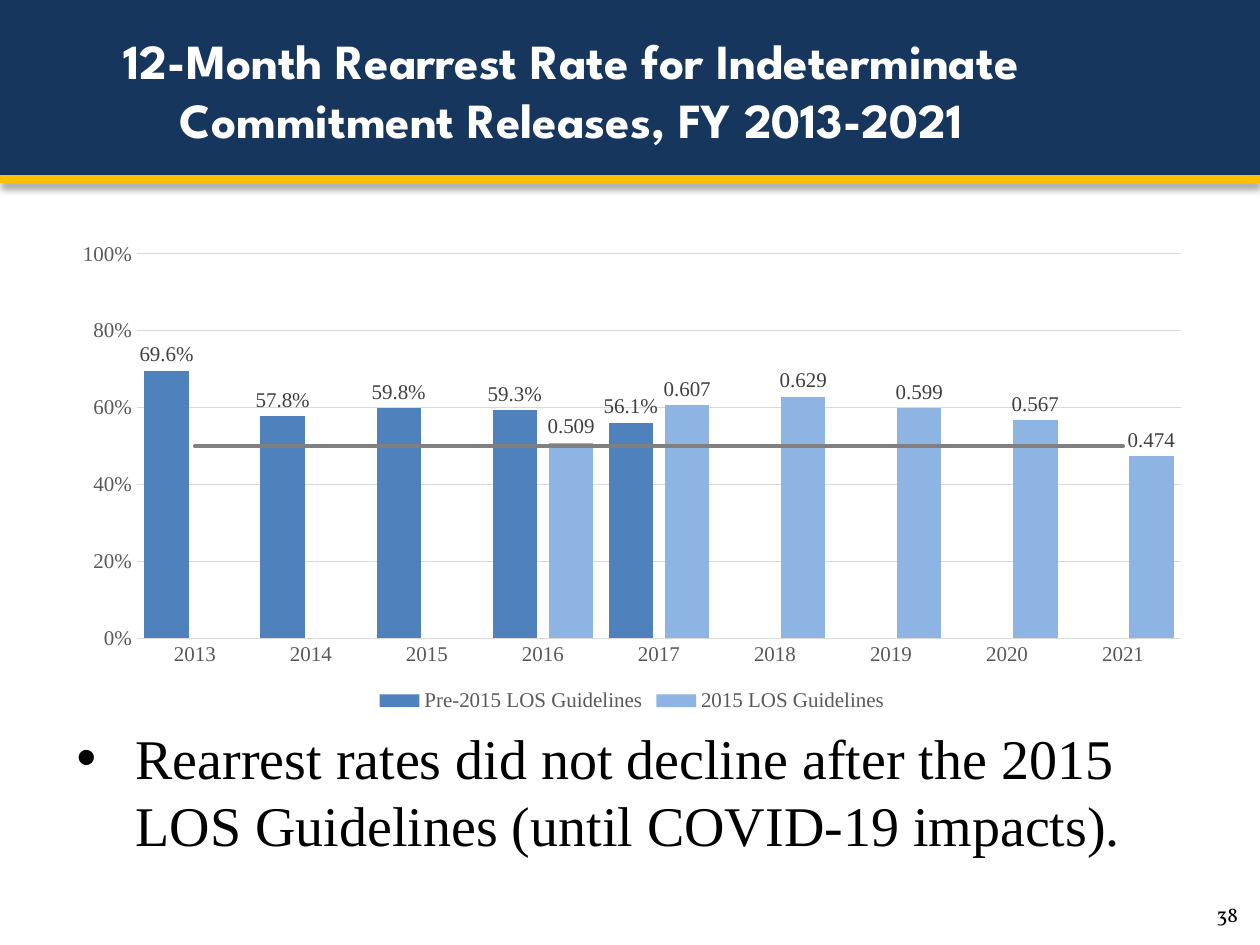
from lxml import etree
from pptx import Presentation
from pptx.chart.data import CategoryChartData
from pptx.dml.color import RGBColor
from pptx.enum import chart as charts, shapes, text
from pptx.oxml import parse_xml
from pptx.oxml.ns import nsdecls, qn
from pptx.util import Emu, Pt

PX = 914400 / 126
COLORS = {"navy": "17365D", "gold": "FFC000", "white": "FFFFFF", "black": "000000",
          "before": "4F81BD", "after": "8EB4E3", "target": "808080",
          "grid": "D9D9D9", "axis": "595959", "label": "404040"}
SERIF = "Times New Roman"


def px(*lengths):
    return [Emu(round(length * PX)) for length in lengths]


def style(font, name, size, color, bold=False):
    font.name, font.size, font.bold = name, Pt(size), bold
    font.color.rgb = RGBColor.from_string(COLORS[color])


deck = Presentation()
deck.slide_width, deck.slide_height = px(1260, 945)
page = deck.slides.add_slide(deck.slide_layouts[1])
title, body = page.placeholders[0], page.placeholders[1]

# Header band and gold rule, placed behind the title
band = page.shapes.add_shape(shapes.MSO_SHAPE.RECTANGLE, *px(0, 0, 1260, 179))
band.shadow.inherit = False
band.fill.solid()
band.fill.fore_color.rgb = RGBColor.from_string(COLORS["navy"])
band.line.fill.background()
rule = page.shapes.add_connector(shapes.MSO_CONNECTOR.STRAIGHT, *px(0, 179, 1260, 179))
rule.line.width = Pt(4.5)
rule.line.color.rgb = RGBColor.from_string(COLORS["gold"])
rule._element.spPr.append(parse_xml(
    f'<a:effectLst {nsdecls("a")}><a:outerShdw blurRad="50800" dist="38100" dir="5400000" '
    'rotWithShape="0"><a:srgbClr val="000000"><a:alpha val="40000"/></a:srgbClr>'
    '</a:outerShdw></a:effectLst>'))
for depth, part in enumerate((band, rule)):
    page.shapes._spTree.insert(2 + depth, part._element)

# Title
title.left, title.top, title.width, title.height = px(60, 10, 1022, 158)
title.text_frame.auto_size = text.MSO_AUTO_SIZE.NONE
title.text_frame.vertical_anchor = text.MSO_ANCHOR.MIDDLE
para = title.text_frame.paragraphs[0]
para.alignment = text.PP_ALIGN.CENTER
span = para.add_run()
span.text = "12-Month Rearrest Rate for Indeterminate Commitment Releases, FY 2013-2021"
style(span.font, "League Spartan", 28, "white", bold=True)

# Takeaway bullet
body.left, body.top, body.width, body.height = px(60, 717, 1142, 186)
body.text_frame.auto_size = text.MSO_AUTO_SIZE.NONE
para = body.text_frame.paragraphs[0]
props = para._p.get_or_add_pPr()
props.set("marL", str(int(px(63)[0])))
props.set("indent", str(int(px(-59)[0])))
bullet_color = etree.SubElement(props, qn("a:buClr"))
etree.SubElement(bullet_color, qn("a:srgbClr")).set("val", COLORS["black"])
etree.SubElement(props, qn("a:buFont")).set("typeface", "Arial")
etree.SubElement(props, qn("a:buChar")).set("char", "•")
para.space_before = Pt(0)
span = para.add_run()
span.text = "Rearrest rates did not decline after the 2015 LOS Guidelines (until COVID-19 impacts)."
style(span.font, SERIF, 32, "black")

# Chart data
data = CategoryChartData()
data.categories = [str(year) for year in range(2013, 2022)]
data.add_series("Pre-2015 LOS Guidelines",
                [0.696, 0.578, 0.598, 0.593, 0.561] + [None] * 4, "0.0%")
data.add_series("2015 LOS Guidelines",
                [None] * 3 + [0.509, 0.607, 0.629, 0.599, 0.567, 0.474], "General")
data.add_series("Series 3", [0.5] * 9, "General")
chart = page.shapes.add_chart(charts.XL_CHART_TYPE.COLUMN_CLUSTERED,
                              *px(60, 233, 1144, 484), data).chart
style(chart.font, SERIF, 12, "black")
chart.has_title = False

# Columns and their labels
plot = chart.plots[0]
plot.gap_width, plot.overlap, plot.vary_by_categories = 34, -27, False
for series, color, number_format in zip(plot.series, ("before", "after"), ("0.0%", "General")):
    series.format.fill.solid()
    series.format.fill.fore_color.rgb = RGBColor.from_string(COLORS[color])
    labels = series.data_labels
    labels.show_value = True
    labels.number_format, labels.number_format_is_linked = number_format, False
    labels.position = charts.XL_LABEL_POSITION.OUTSIDE_END
    style(labels.font, SERIF, 12, "label")

# Third series becomes a line on the same axes
bars = plot._element
target = plot.series[2]._element
for bar_only in target.findall(qn("c:invertIfNegative")):
    target.remove(bar_only)
line_chart = parse_xml(f'<c:lineChart {nsdecls("c")}><c:grouping val="standard"/>'
                       '<c:varyColors val="0"/></c:lineChart>')
line_chart.append(target)
etree.SubElement(line_chart, qn("c:marker")).set("val", "1")
for axis_id in bars.findall(qn("c:axId")):
    etree.SubElement(line_chart, qn("c:axId")).set("val", axis_id.get("val"))
bars.addnext(line_chart)
target_series = chart.plots[1].series[0]
target_series.smooth = False
target_series.marker.style = charts.XL_MARKER_STYLE.NONE
target_series.format.line.width = Pt(2.25)
target_series.format.line.color.rgb = RGBColor.from_string(COLORS["target"])
target_series.format.line._ln.set("cap", "rnd")

# Axes
years, rates = chart.category_axis, chart.value_axis
for axis in (years, rates):
    axis.major_tick_mark = axis.minor_tick_mark = charts.XL_TICK_MARK.NONE
    style(axis.tick_labels.font, SERIF, 12, "axis")
rates.minimum_scale, rates.maximum_scale, rates.major_unit = 0, 1, 0.2
rates.tick_labels.number_format, rates.tick_labels.number_format_is_linked = "0%", False
rates.format.line.fill.background()
for thin in (years.format.line, rates.major_gridlines.format.line):
    thin.width = Pt(0.75)
    thin.color.rgb = RGBColor.from_string(COLORS["grid"])

# Legend without the line
chart.has_legend = True
legend = chart.legend
legend.position = charts.XL_LEGEND_POSITION.BOTTOM
legend.include_in_layout = False
style(legend.font, SERIF, 12, "axis")
legend._element.find(qn("c:legendPos")).addnext(parse_xml(
    f'<c:legendEntry {nsdecls("c")}><c:idx val="2"/><c:delete val="1"/></c:legendEntry>'))

# Page number
box = page.shapes.add_textbox(*px(1174, 888, 73, 53))
frame = box.text_frame
frame.word_wrap = True
frame.vertical_anchor = text.MSO_ANCHOR.MIDDLE
frame.margin_left, frame.margin_top, frame.margin_right, frame.margin_bottom = px(9, 5, 9, 5)
para = frame.paragraphs[0]
para.alignment = text.PP_ALIGN.RIGHT
span = para.add_run()
span.text = "38"
style(span.font, "Vollkorn", 12, "black")

deck.save("out.pptx")
